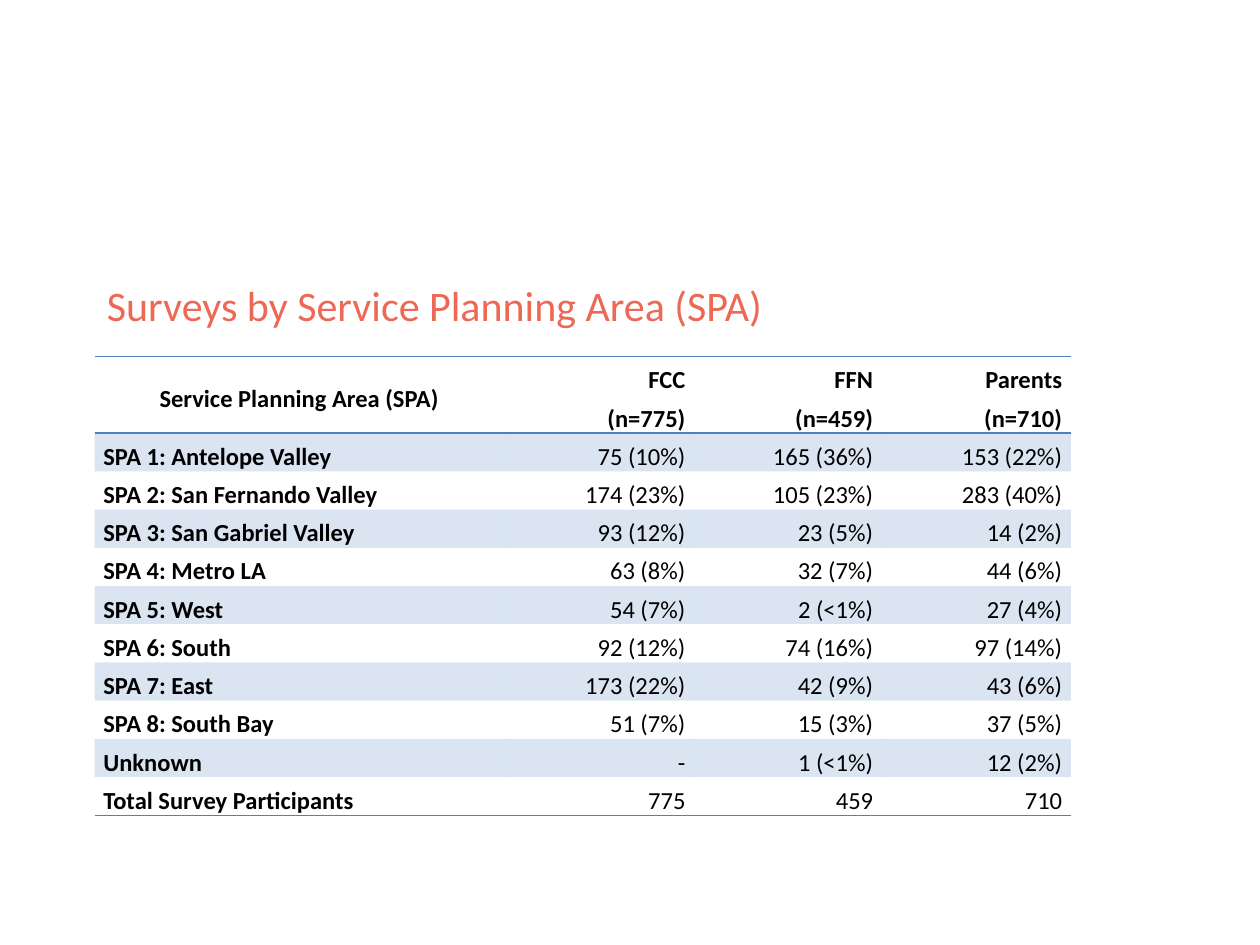
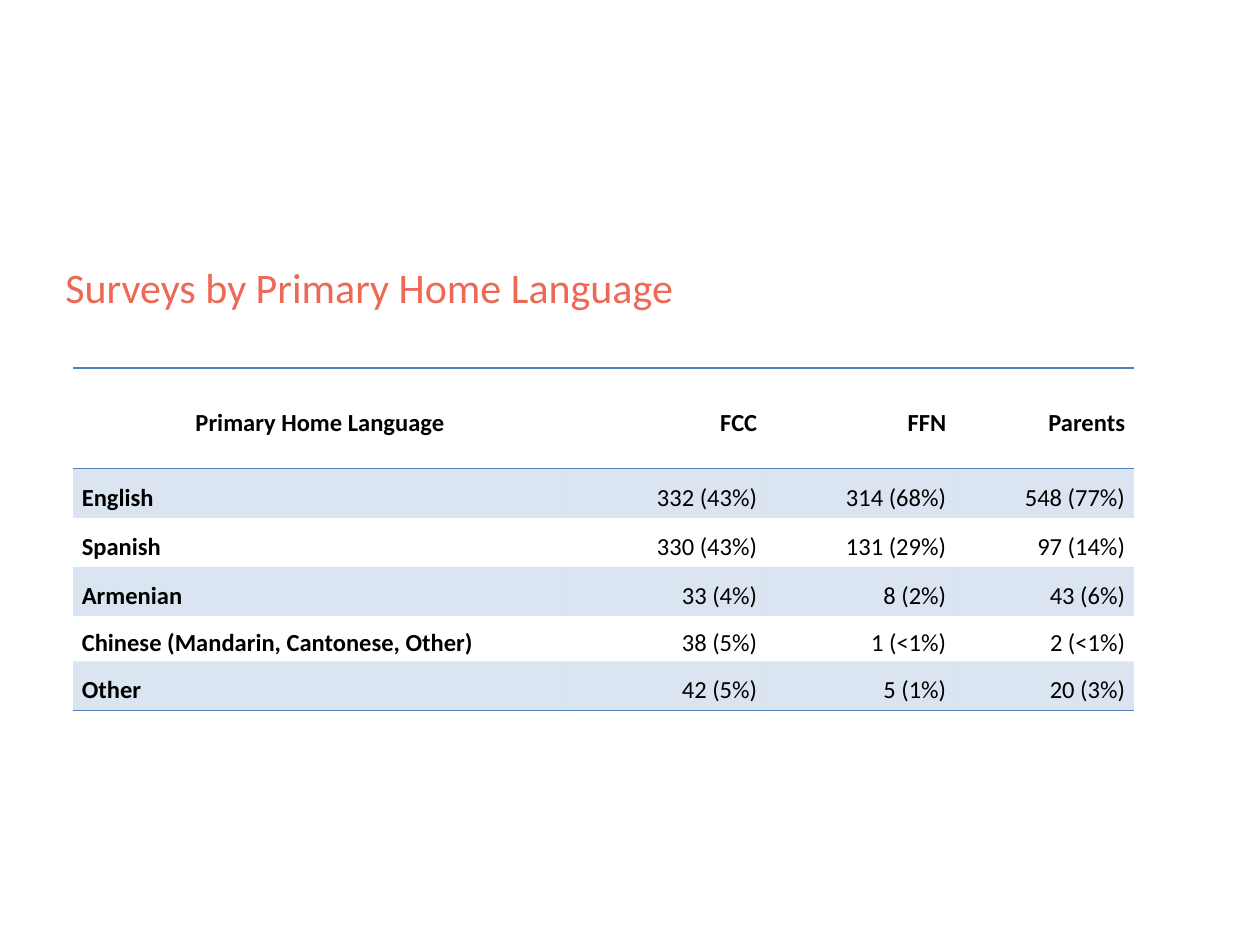
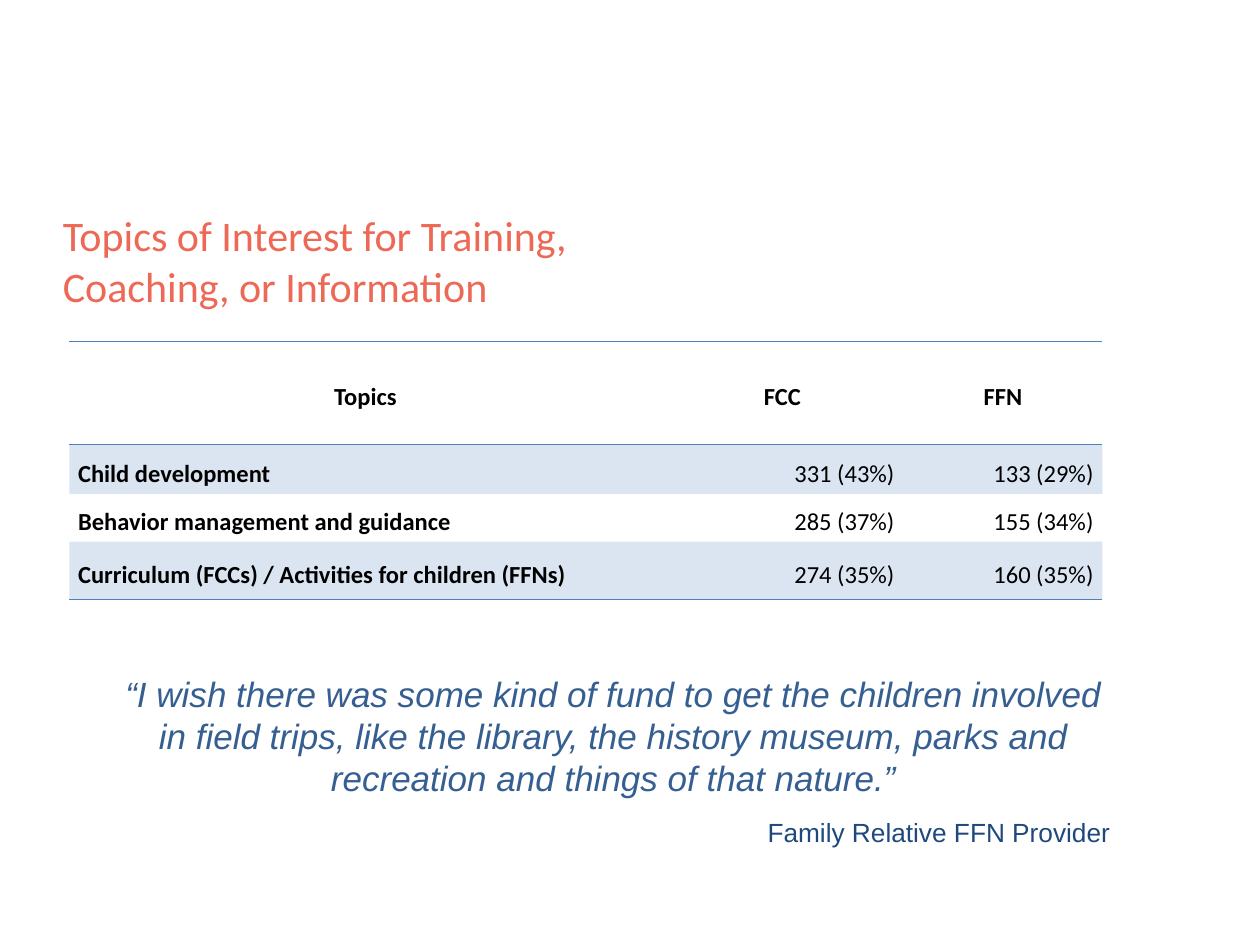
from lxml import etree
from pptx import Presentation
from pptx.dml.color import RGBColor
from pptx.enum.text import MSO_ANCHOR as Anchor, PP_ALIGN as Align
from pptx.oxml import parse_xml
from pptx.oxml.ns import nsdecls, qn
from pptx.util import Inches, Pt

COLORS = {
    "title": "ED6855",
    "table": "4F81BD",
    "text": "000000",
    "quote": "365F91",
    "speaker": "1F497D",
}
NO_TABLE_STYLE = "{2D5ABB26-0587-4C30-8999-92F81FD0307C}"

# Content of each slide: places in inches, first table row is the header
SLIDES = [
    {
        "title": "Surveys by Service Planning Area (SPA)",
        "title_at": (0.75, 2, 6.67, 0.83),
        "table_at": (0.75, 2.83),
        "columns": [3.25, 1.51, 1.49, 1.5],
        "heights": [0.23] * 11,
        "header_align": Align.RIGHT,
        "rows": [
            ("Service Planning Area (SPA)", "FCC\n(n=775)", "FFN\n(n=459)", "Parents\n(n=710)"),
            ("SPA 1: Antelope Valley", "75 (10%)", "165 (36%)", "153 (22%)"),
            ("SPA 2: San Fernando Valley", "174 (23%)", "105 (23%)", "283 (40%)"),
            ("SPA 3: San Gabriel Valley", "93 (12%)", "23 (5%)", "14 (2%)"),
            ("SPA 4: Metro LA", "63 (8%)", "32 (7%)", "44 (6%)"),
            ("SPA 5: West", "54 (7%)", "2 (<1%)", "27 (4%)"),
            ("SPA 6: South", "92 (12%)", "74 (16%)", "97 (14%)"),
            ("SPA 7: East", "173 (22%)", "42 (9%)", "43 (6%)"),
            ("SPA 8: South Bay", "51 (7%)", "15 (3%)", "37 (5%)"),
            ("Unknown", "-", "1 (<1%)", "12 (2%)"),
            ("Total Survey Participants", "775", "459", "710"),
        ],
    },
    {
        "title": "Surveys by Primary Home Language",
        "title_at": (0.42, 1.86, 6.67, 0.83),
        "table_at": (0.58, 2.92),
        "columns": [3.92, 1.58, 1.5, 1.42],
        "heights": [0.8, 0.39, 0.39, 0.39, 0.36, 0.39],
        "header_align": Align.RIGHT,
        "rows": [
            ("Primary Home Language", "FCC", "FFN", "Parents"),
            ("English", "332 (43%)", "314 (68%)", "548 (77%)"),
            ("Spanish", "330 (43%)", "131 (29%)", "97 (14%)"),
            ("Armenian", "33 (4%)", "8 (2%)", "43 (6%)"),
            ("Chinese (Mandarin, Cantonese, Other)", "38 (5%)", "1 (<1%)", "2 (<1%)"),
            ("Other", "42 (5%)", "5 (1%)", "20 (3%)"),
        ],
    },
    {
        "title": "Topics of Interest for Training, Coaching, or Information",
        "title_at": (0.4, 1.65, 4.93, 0.83),
        "table_at": (0.55, 2.71),
        "columns": [4.7, 1.92, 1.58],
        "heights": [0.82, 0.39, 0.38, 0.46],
        "header_align": Align.CENTER,
        "rows": [
            ("Topics", "FCC", "FFN"),
            ("Child development", "331 (43%)", "133 (29%)"),
            ("Behavior management and guidance", "285 (37%)", "155 (34%)"),
            ("Curriculum (FCCs) / Activities for children (FFNs)", "274 (35%)", "160 (35%)"),
        ],
    },
]


def set_font(paragraph, name, size, color, bold=False, italic=False):
    font = paragraph.font
    font.name, font.size = name, Pt(size)
    font.bold, font.italic = bold, italic
    font.color.rgb = RGBColor.from_string(COLORS[color])


def style_cell(cell, shaded, edges):
    cell.vertical_anchor = Anchor.MIDDLE
    cell.margin_left = cell.margin_right = Inches(0.07)
    cell.margin_top = cell.margin_bottom = 0
    properties = cell._tc.get_or_add_tcPr()
    if shaded:
        cell.fill.solid()
        cell.fill.fore_color.rgb = RGBColor.from_string(COLORS["table"])
        color = properties.find(".//" + qn("a:srgbClr"))
        etree.SubElement(color, qn("a:alpha"), val="20000")
    else:
        cell.fill.background()
    for index, edge in enumerate(edges):
        properties.insert(index, parse_xml(
            f'<a:{edge} {nsdecls("a")} w="{Pt(1)}"><a:solidFill>'
            f'<a:srgbClr val="{COLORS["table"]}"/></a:solidFill></a:{edge}>'))


presentation = Presentation()
presentation.slide_width = Inches(10)
presentation.slide_height = Inches(7.5)

for content in SLIDES:
    slide = presentation.slides.add_slide(presentation.slide_layouts[6])

    # Title
    title = slide.shapes.add_textbox(*map(Inches, content["title_at"])).text_frame
    title.word_wrap = True
    title.vertical_anchor = Anchor.MIDDLE
    title.text = content["title"]
    set_font(title.paragraphs[0], "Calibri", 24, "title")

    # Table
    rows, columns, heights = content["rows"], content["columns"], content["heights"]
    frame = slide.shapes.add_table(
        len(rows), len(columns), *map(Inches, content["table_at"]),
        Inches(sum(columns)), Inches(sum(heights)))
    frame.element.xpath(".//a:tableStyleId")[0].text = NO_TABLE_STYLE
    table = frame.table
    for column, width in zip(table.columns, columns):
        column.width = Inches(width)
    for row, height in zip(table.rows, heights):
        row.height = Inches(height)

    for row_index, values in enumerate(rows):
        is_header = row_index == 0
        edges = []
        if is_header:
            edges = ["lnT", "lnB"]
        elif row_index == len(rows) - 1:
            edges = ["lnB"]
        for column_index, value in enumerate(values):
            is_label = column_index == 0
            cell = table.cell(row_index, column_index)
            cell.text = value
            style_cell(cell, row_index % 2 == 1, edges)
            if is_header:
                align = Align.CENTER if is_label else content["header_align"]
            else:
                align = Align.LEFT if is_label else Align.RIGHT
            for paragraph in cell.text_frame.paragraphs:
                paragraph.alignment = align
                paragraph.line_spacing = 1.3
                set_font(paragraph, "Calibri", 14, "text", bold=is_header or is_label)

# Quote under the last table
quote_box = slide.shapes.add_textbox(Inches(0.83), Inches(5.29), Inches(8.08), Inches(1.51))
quote_frame = quote_box.text_frame
quote_frame.word_wrap = True
quote = quote_frame.paragraphs[0]
quote.text = (
    "“I wish there was some kind of fund to get the children involved in field trips, "
    "like the library, the history museum, parks and recreation and things of that nature.”")
quote.alignment = Align.CENTER
set_font(quote, "Arial", 20, "quote", italic=True)

speaker = quote_frame.add_paragraph()
speaker.text = "Family Relative FFN Provider"
speaker.alignment = Align.RIGHT
speaker.space_before = Pt(10)
set_font(speaker, "Arial", 15, "speaker")

presentation.save("out.pptx")
